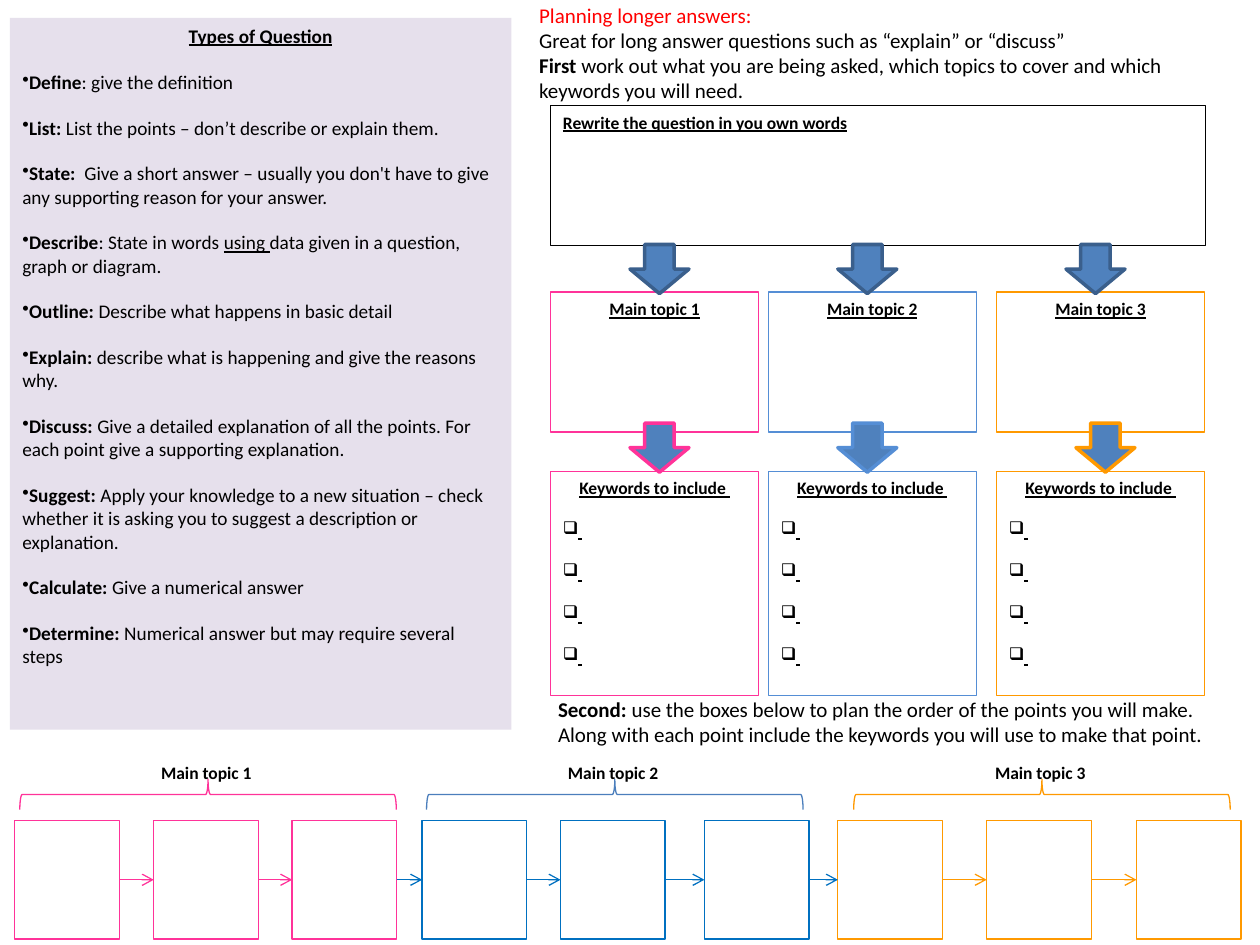
from lxml import etree
from pptx import Presentation
from pptx.dml.color import RGBColor
from pptx.enum.shapes import MSO_CONNECTOR, MSO_SHAPE
from pptx.enum.text import MSO_ANCHOR, PP_ALIGN
from pptx.oxml.ns import qn
from pptx.util import Cm, Pt

RECT, DOWN, BRACE = MSO_SHAPE.RECTANGLE, MSO_SHAPE.DOWN_ARROW, MSO_SHAPE.RIGHT_BRACE
STRAIGHT = MSO_CONNECTOR.STRAIGHT
LEFT, CENTER = PP_ALIGN.LEFT, PP_ALIGN.CENTER
TOP = MSO_ANCHOR.TOP
FONT = "Calibri"
BLACK, RED, PINK, ORANGE = "000000", "FF0000", "FF3399", "FF9900"
SKY, BLUE, BRACE_BLUE = "558ED5", "0070C0", "4B7EBC"
ARROW_FILL, ARROW_EDGE, LILAC = "4F81BD", "3A5F8C", "E6E0EC"

# Each definition: a list of (text, style) runs; b is bold, u is underlined
DEFINITIONS = [
    [("Define", "b"), (": give the definition", "")],
    [("List: ", "b"), ("List the points – don’t describe or explain them.", "")],
    [("State:  ", "b"), ("Give a short answer – usually you don't have to give "
                         "any supporting reason for your answer.", "")],
    [("Describe", "b"), (": State in words ", ""), ("using ", "u"),
     ("data given in a question, graph or diagram.", "")],
    [("Outline: ", "b"), ("Describe what happens in basic detail", "")],
    [("Explain:", "b"), (" describe what is happening and give the reasons why.", "")],
    [("Discuss: ", "b"), ("Give a detailed explanation of all the points. "
                          "For each point give a supporting explanation.", "")],
    [("Suggest:", "b"), (" Apply your knowledge to a new situation – check whether it is "
                         "asking you to suggest a description or explanation.", "")],
    [("Calculate:", "b"), (" Give a numerical answer", "")],
    [("Determine: ", "b"), ("Numerical answer but may require several steps", "")],
]

# Topic columns: box left, upper arrow left, lower arrow left, colour
COLUMNS = [(11.1, 12.7, 12.7, PINK), (15.49, 16.89, 16.89, SKY), (20.09, 21.49, 21.69, ORANGE)]
# Planning row: box lefts, box colour, brace left, brace colour
PLANS = [
    ([0.3, 3.1, 5.89], PINK, 3.89, PINK),
    ([8.51, 11.3, 14.2], BLUE, 12.09, BRACE_BLUE),
    ([16.89, 19.89, 22.91], ORANGE, 20.7, ORANGE),
]
STEP_W, STEP_H, STEP_TOP = 2.11, 2.39, 16.54


def rgb(color):
    return RGBColor.from_string(color)


def add_box(s, kind, x, y, w, h, fill=None, line=None, width=0.75):
    sp = s.shapes.add_shape(kind, Cm(x), Cm(y), Cm(w), Cm(h))
    sp.shadow.inherit = False
    if fill:
        sp.fill.solid()
        sp.fill.fore_color.rgb = rgb(fill)
    else:
        sp.fill.background()
    if line:
        sp.line.color.rgb = rgb(line)
        sp.line.width = Pt(width)
    else:
        sp.line.fill.background()
    return sp


def add_paragraph(tf, runs, size, align=LEFT, color=BLACK, bullet=None, before=0):
    p = tf.paragraphs[0]
    if p.runs:
        p = tf.add_paragraph()
    p.alignment = align
    p.space_before = Pt(before)
    if bullet:
        props = p._p.get_or_add_pPr()
        props.set("marL", "0")
        props.set("indent", "0")
        etree.SubElement(props, qn("a:buChar")).set("char", bullet)
    for text, style in runs:
        r = p.add_run()
        r.text = text
        r.font.name = FONT
        r.font.size = Pt(size)
        r.font.color.rgb = rgb(color)
        r.font.bold = "b" in style
        r.font.underline = "u" in style


def text_frame(sp, wrap=True):
    tf = sp.text_frame
    tf.word_wrap = wrap
    tf.vertical_anchor = TOP
    return tf


def add_text_box(s, x, y, w, h, wrap=True):
    return text_frame(s.shapes.add_textbox(Cm(x), Cm(y), Cm(w), Cm(h)), wrap)


def add_arrow(s, x1, x2, y, color):
    c = s.shapes.add_connector(STRAIGHT, Cm(x1), Cm(y), Cm(x2), Cm(y))
    c.line.color.rgb = rgb(color)
    c.line.width = Pt(0.75)
    etree.SubElement(c.line._get_or_add_ln(), qn("a:tailEnd")).set("type", "arrow")
    etree.SubElement(c._element.spPr, qn("a:effectLst"))


def add_question_types(s):
    tf = text_frame(add_box(s, RECT, 0.2, 0.36, 10.11, 14.35, fill=LILAC))
    add_paragraph(tf, [("Types of Question", "bu")], 11, CENTER)
    for runs in DEFINITIONS:
        add_paragraph(tf, runs, 11, bullet="•", before=13)


def add_topic_columns(s):
    tf = text_frame(add_box(s, RECT, 11.1, 2.13, 13.21, 2.82, line=BLACK))
    add_paragraph(tf, [("Rewrite the question in you own words", "bu")], 10)
    for number, (x, upper, lower, color) in enumerate(COLUMNS, 1):
        tf = text_frame(add_box(s, RECT, x, 5.89, 4.19, 2.82, line=color))
        add_paragraph(tf, [(f"Main topic {number}", "bu")], 10, CENTER)
        tf = text_frame(add_box(s, RECT, x, 9.5, 4.19, 4.52, line=color))
        add_paragraph(tf, [("Keywords to include ", "bu")], 10, CENTER)
        for _ in range(4):
            add_paragraph(tf, [(" ", "bu")], 10, bullet="❑", before=12)
        add_box(s, DOWN, upper, 4.93, 1.19, 0.99, ARROW_FILL, ARROW_EDGE, 2)
        add_box(s, DOWN, lower, 8.53, 1.19, 0.99, ARROW_FILL, color, 2)


def add_instructions(s):
    tf = add_text_box(s, 10.62, -0.08, 13.69, 2.31)
    add_paragraph(tf, [("Planning longer answers:", "")], 12, color=RED)
    add_paragraph(tf, [("Great for long answer questions such as “explain” or “discuss”", "")], 12)
    add_paragraph(tf, [("First", "b"), (" work out what you are being asked, which topics to "
                                        "cover and which keywords you will need.", "")], 12)
    tf = add_text_box(s, 11, 13.92, 13.69, 1.27)
    add_paragraph(tf, [("Second: ", "b"),
                       ("use the boxes below to plan the order of the points you will make. Along "
                        "with each point include the keywords you will use to make that point.", "")], 12)


def add_planning_row(s):
    steps = []
    for number, (lefts, color, brace_x, brace_color) in enumerate(PLANS, 1):
        for x in lefts:
            add_box(s, RECT, x, STEP_TOP, STEP_W, STEP_H, line=color)
            steps.append((x, color))
        tf = add_text_box(s, brace_x - 0.89, 15.24, 2.36, 0.69, wrap=False)
        add_paragraph(tf, [(f"Main topic {number}", "b")], 10)
        brace = add_box(s, BRACE, brace_x, 12.22, 0.61, 7.59, line=brace_color)
        brace.rotation = 270
        brace.adjustments[0] = 0.08
        brace.adjustments[1] = 0.5
    # Arrows inside a topic take its colour; those between topics are blue
    for (x, color), (next_x, next_color) in zip(steps, steps[1:]):
        add_arrow(s, x + STEP_W, next_x, STEP_TOP + STEP_H / 2,
                  color if color == next_color else BLUE)


def main():
    prs = Presentation()
    prs.slide_width, prs.slide_height = Cm(25.4), Cm(19.05)
    s = prs.slides.add_slide(prs.slide_layouts[6])
    add_question_types(s)
    add_topic_columns(s)
    add_instructions(s)
    add_planning_row(s)
    prs.save("out.pptx")


if __name__ == "__main__":
    main()
